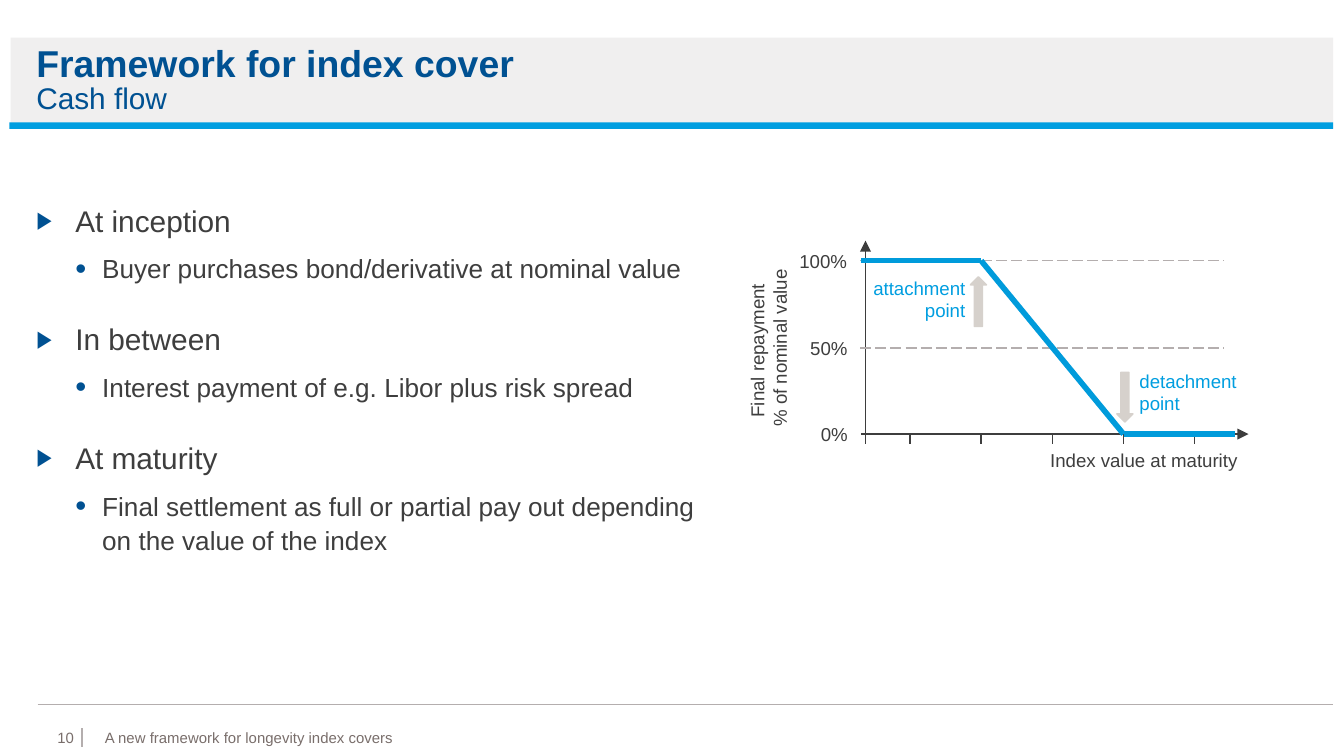
from lxml import etree
from pptx import Presentation
from pptx.dml.color import RGBColor
from pptx.enum.dml import MSO_LINE
from pptx.enum.shapes import MSO_CONNECTOR, MSO_SHAPE
from pptx.enum.text import MSO_ANCHOR, PP_ALIGN
from pptx.oxml.ns import qn
from pptx.util import Inches, Pt

STRAIGHT = MSO_CONNECTOR.STRAIGHT
LONG_DASH = MSO_LINE.LONG_DASH
RECTANGLE = MSO_SHAPE.RECTANGLE
UP_ARROW, DOWN_ARROW = MSO_SHAPE.UP_ARROW, MSO_SHAPE.DOWN_ARROW
TOP, MIDDLE = MSO_ANCHOR.TOP, MSO_ANCHOR.MIDDLE
LEFT, CENTER, RIGHT = PP_ALIGN.LEFT, PP_ALIGN.CENTER, PP_ALIGN.RIGHT

FONT = "Arial"
NAVY, BLUE, CURVE_BLUE = "005192", "009EE0", "009BDB"
INK, AXIS_INK, FOOTER_INK = "3E3E3E", "3D3D3D", "796E6B"
BAND_GREY, RULE_GREY, ARROW_GREY = "F0EFEF", "B4AEAE", "D6D1CC"

# Diagram positions
AXIS_X, AXIS_Y = 6.44, 3.23
FULL_Y, HALF_Y = 1.94, 2.59
TICK_START, TICK_STEP, TICK_COUNT = 6.77, 0.53, 5
ATTACH_X, DETACH_X = TICK_START + TICK_STEP, TICK_START + 3 * TICK_STEP

TOPICS = [
    ("At inception", "Buyer purchases bond/derivative at nominal value"),
    ("In between", "Interest payment of e.g. Libor plus risk spread"),
    ("At maturity", "Final settlement as full or partial pay out depending "
                    "on the value of the index"),
]


def color(value):
    return RGBColor.from_string(value)


def add_block(page, kind, left, top, width, height, fill):
    block = page.shapes.add_shape(
        kind, Inches(left), Inches(top), Inches(width), Inches(height))
    block.shadow.inherit = False
    block.fill.solid()
    block.fill.fore_color.rgb = color(fill)
    block.line.fill.background()
    return block


def add_line(page, start, end, ink, weight=0.75, dash=None, arrow=False):
    line = page.shapes.add_connector(
        STRAIGHT, *[Inches(value) for value in (*start, *end)])
    line.line.color.rgb = color(ink)
    line.line.width = Pt(weight)
    if dash is not None:
        line.line.dash_style = dash
    properties = line._element.spPr
    if arrow:
        etree.SubElement(properties.find(qn("a:ln")), qn("a:tailEnd"),
                         type="triangle")
    etree.SubElement(properties, qn("a:effectLst"))


def add_span(para, text, size, ink, bold=False):
    span = para.add_run()
    span.text = text
    span.font.name = FONT
    span.font.size = Pt(size)
    span.font.bold = bold
    span.font.color.rgb = color(ink)


def add_box(page, left, top, width, height, inset=True, wrap=False,
            anchor=TOP):
    box = page.shapes.add_textbox(
        Inches(left), Inches(top), Inches(width), Inches(height))
    frame = box.text_frame
    frame.word_wrap = wrap
    frame.vertical_anchor = anchor
    if not inset:
        frame.margin_left = frame.margin_right = 0
        frame.margin_top = frame.margin_bottom = 0
    return box


def add_text(page, lines, left, top, width, height, size, ink, align=LEFT,
             bold=False, **options):
    box = add_box(page, left, top, width, height, **options)
    frame = box.text_frame
    for index, text in enumerate(lines):
        para = frame.add_paragraph() if index else frame.paragraphs[0]
        para.alignment = align
        add_span(para, text, size, ink, bold)
    return box


def set_bullet(para, symbol, percent, margin, hanging):
    properties = para._p.get_or_add_pPr()
    properties.set("marL", str(Inches(margin)))
    properties.set("indent", str(-Inches(hanging)))
    bullet_color = etree.SubElement(properties, qn("a:buClr"))
    etree.SubElement(bullet_color, qn("a:srgbClr"), val=NAVY)
    etree.SubElement(properties, qn("a:buSzPct"), val=str(percent * 1000))
    etree.SubElement(properties, qn("a:buFont"), typeface=FONT)
    etree.SubElement(properties, qn("a:buChar"), char=symbol)


def add_topics(page):
    frame = add_box(page, 0.27, 1.48, 5.01, 2.68, inset=False,
                    wrap=True).text_frame
    for index, (heading, detail) in enumerate(TOPICS):
        para = frame.add_paragraph() if index else frame.paragraphs[0]
        para.line_spacing = 1.1
        if index:
            para.space_before = Pt(18)
        set_bullet(para, "▶", 80, 0.29, 0.29)
        add_span(para, heading, 16, INK)

        para = frame.add_paragraph()
        para.level = 1
        para.line_spacing = 1.1
        para.space_before = Pt(6)
        set_bullet(para, "•", 120, 0.49, 0.2)
        add_span(para, detail, 14, INK)


def add_header_and_footer(page):
    add_block(page, RECTANGLE, 0.08, 0.28, 9.84, 0.67, BAND_GREY)
    add_block(page, RECTANGLE, 0.07, 0.91, 9.85, 0.05, BLUE)
    add_text(page, ["Framework for index cover"], 0.27, 0.28, 9.35, 0.37, 20,
             NAVY, bold=True, inset=False, wrap=True, anchor=MIDDLE)
    add_text(page, ["Cash flow"], 0.27, 0.59, 0.98, 0.27, 16, NAVY,
             inset=False)

    add_line(page, (0.28, 5.24), (9.92, 5.24), RULE_GREY)
    add_line(page, (0.61, 5.42), (0.61, 5.56), RULE_GREY)
    add_text(page, ["10"], 0.26, 5.42, 0.29, 0.17, 8, FOOTER_INK, RIGHT,
             inset=False, wrap=True)
    add_text(page, ["A new framework for longevity index covers"],
             0.78, 5.42, 6.85, 0.25, 8, FOOTER_INK, inset=False, wrap=True)


def add_payoff_diagram(page):
    # Axes, ticks and guide lines
    for index in range(TICK_COUNT):
        x = TICK_START + index * TICK_STEP
        add_line(page, (x, AXIS_Y), (x, 3.3), INK)
    add_line(page, (6.41, AXIS_Y), (9.29, AXIS_Y), AXIS_INK, arrow=True)
    add_line(page, (AXIS_X, 3.3), (AXIS_X, 1.79), AXIS_INK, arrow=True)
    for y in (FULL_Y, HALF_Y):
        add_line(page, (6.4, y), (9.11, y), RULE_GREY, dash=LONG_DASH)

    # Axis labels, sharing one right edge
    for text, y, width in (("100%", FULL_Y, 0.56), ("50%", HALF_Y, 0.48),
                           ("0%", AXIS_Y, 0.4)):
        add_text(page, [text], 6.41 - width, y - 0.13, width, 0.27, 10, INK)
    axis_title = add_text(page, ["Final repayment ", "% of nominal value"],
                          5.03, 2.37, 1.38, 0.44, 10, INK, CENTER)
    axis_title.rotation = 270
    add_text(page, ["Index value at maturity"], 7.71, 3.29, 1.6, 0.27, 10,
             INK, CENTER)

    # Payoff curve
    curve = [(6.41, FULL_Y), (ATTACH_X, FULL_Y), (DETACH_X, AXIS_Y),
             (9.19, AXIS_Y)]
    for start, end in zip(curve, curve[1:]):
        add_line(page, start, end, CURVE_BLUE, weight=3)

    # Attachment and detachment points
    for kind, left, top in ((UP_ARROW, 7.22, 2.06), (DOWN_ARROW, 8.31, 2.77)):
        arrow = add_block(page, kind, left, top, 0.12, 0.37, ARROW_GREY)
        arrow.line.color.rgb = color(ARROW_GREY)
        arrow.line.width = Pt(0.75)
    add_text(page, ["attachment", "point"], 6.39, 2.01, 0.89, 0.44, 10, BLUE,
             RIGHT)
    add_text(page, ["detachment", "point"], 8.38, 2.7, 0.93, 0.44, 10, BLUE)


def main():
    deck = Presentation()
    # Widescreen page, 16:9
    deck.slide_width = Inches(10)
    deck.slide_height = Inches(10 * 9 / 16)
    page = deck.slides.add_slide(deck.slide_layouts[6])
    add_header_and_footer(page)
    add_topics(page)
    add_payoff_diagram(page)
    deck.save("out.pptx")


if __name__ == "__main__":
    main()
